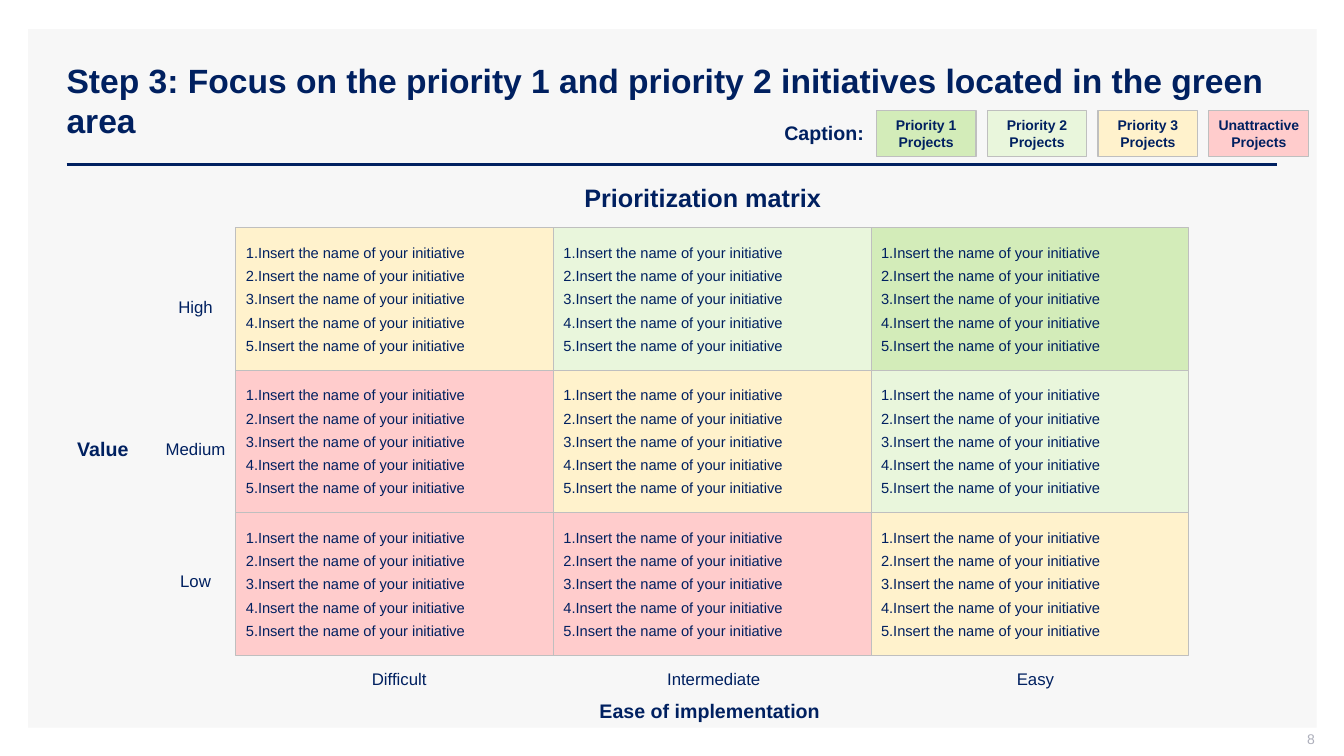
from pptx import Presentation
from pptx.dml.color import RGBColor
from pptx.enum.shapes import MSO_CONNECTOR, MSO_SHAPE
from pptx.enum.text import MSO_ANCHOR as Anchor, PP_ALIGN as Align
from pptx.oxml.ns import qn
from pptx.util import Inches, Pt
from lxml.etree import SubElement

NAVY = RGBColor(0x00, 0x20, 0x60)
PANEL = RGBColor(0xF7, 0xF7, 0xF7)
BORDER = RGBColor(0xBF, 0xBF, 0xBF)
PAGE_GREY = RGBColor(0xAD, 0xAF, 0xBB)
GREEN = RGBColor(0xD3, 0xEC, 0xB9)
LIGHT_GREEN = RGBColor(0xE9, 0xF6, 0xDC)
YELLOW = RGBColor(0xFF, 0xF2, 0xCC)
RED = RGBColor(0xFF, 0xCC, 0xCC)

MATRIX_COLOURS = [
    [YELLOW, LIGHT_GREEN, GREEN],
    [RED, YELLOW, LIGHT_GREEN],
    [RED, RED, YELLOW],
]
CAPTIONS = [
    ("Priority 1 Projects", GREEN),
    ("Priority 2 Projects", LIGHT_GREEN),
    ("Priority 3 Projects", YELLOW),
    ("Unattractive Projects", RED),
]
INITIATIVES = ["Insert the name of your initiative"] * 5


def set_all(target, values):
    for name, value in values.items():
        setattr(target, name, value)


def style_font(font, size, bold=False, colour=NAVY):
    set_all(font, {"name": "Arial", "size": Pt(size), "bold": bold})
    font.color.rgb = colour


def style_frame(frame, side=0.1, top=0.05, bottom=0.05, anchor=Anchor.MIDDLE, wrap=True):
    set_all(frame, {
        "margin_left": Inches(side), "margin_right": Inches(side),
        "margin_top": Inches(top), "margin_bottom": Inches(bottom),
        "vertical_anchor": anchor, "word_wrap": wrap,
    })


def add_label(slide, text, box, size, bold=False, align=Align.CENTER, colour=NAVY, **frame_format):
    frame = slide.shapes.add_textbox(*map(Inches, box)).text_frame
    style_frame(frame, **frame_format)
    paragraph = frame.paragraphs[0]
    paragraph.text = text
    paragraph.alignment = align
    style_font(paragraph.font, size, bold, colour)


def add_tile(slide, box, fill, border=BORDER):
    tile = slide.shapes.add_shape(MSO_SHAPE.RECTANGLE, *map(Inches, box))
    tile.shadow.inherit = False
    tile.fill.solid()
    tile.fill.fore_color.rgb = fill
    if border is None:
        tile.line.fill.background()
    else:
        tile.line.color.rgb = border
        tile.line.width = Pt(0.75)
    return tile


def add_panel(slide, box):
    panel = add_tile(slide, box, PANEL, border=None)
    # Stack the panel behind the title placeholder
    slide.shapes.title._element.addprevious(panel._element)


def number_paragraph(paragraph):
    properties = paragraph._p.get_or_add_pPr()
    properties.set("marL", str(Inches(0.12)))
    properties.set("indent", str(-Inches(0.12)))
    bullet_colour = SubElement(properties, qn("a:buClr"))
    SubElement(bullet_colour, qn("a:srgbClr")).set("val", str(NAVY))
    SubElement(properties, qn("a:buFont")).set("typeface", "+mj-lt")
    SubElement(properties, qn("a:buAutoNum")).set("type", "arabicPeriod")


def add_header(slide, box):
    left, top, width, height = box
    title = slide.shapes.title
    set_all(title, dict(zip(("left", "top", "width", "height"), map(Inches, box))))
    style_frame(title.text_frame)
    title.text_frame.text = "Step 3: Focus on the priority 1 and priority 2 initiatives located in the green area"
    heading = title.text_frame.paragraphs[0]
    heading.alignment = Align.LEFT
    style_font(heading.font, 24, True)

    # Rule under the title
    rule_y = top + height + 0.04
    rule = slide.shapes.add_connector(
        MSO_CONNECTOR.STRAIGHT, Inches(left + 0.1), Inches(rule_y),
        Inches(left + width), Inches(rule_y))
    rule.line.color.rgb = NAVY
    rule.line.width = Pt(2)
    SubElement(rule._element.spPr, qn("a:effectLst"))


def add_caption(slide, box):
    left, top, width, height = box
    add_label(slide, "Caption:", (left, top + 0.05, 1.01, 0.34), 14, True,
              Align.LEFT, anchor=Anchor.TOP)
    first, pitch = left + 1.01, 1.1
    tile_width = width - 1.01 - pitch * (len(CAPTIONS) - 1)
    for index, (text, fill) in enumerate(CAPTIONS):
        tile = add_tile(slide, (first + index * pitch, top, tile_width, height), fill)
        style_frame(tile.text_frame, side=0.04)
        entry = tile.text_frame.paragraphs[0]
        entry.text = text
        entry.alignment = Align.CENTER
        style_font(entry.font, 10, True)


def add_cell(slide, box, fill):
    frame = add_tile(slide, box, fill).text_frame
    style_frame(frame)
    for index, initiative in enumerate(INITIATIVES):
        item = frame.add_paragraph() if index else frame.paragraphs[0]
        item.text = initiative
        item.alignment = Align.LEFT
        item.space_before = Pt(2 if index else 0)
        item.space_after = Pt(2)
        number_paragraph(item)
        style_font(item.font, 10.5)


def add_matrix(slide, box):
    left, top, width, height = box
    cell_width, cell_height = width / 3, height / 3
    for row, colours in enumerate(MATRIX_COLOURS):
        for column, fill in enumerate(colours):
            add_cell(slide, (left + column * cell_width, top + row * cell_height,
                             cell_width, cell_height), fill)

    # Heading and axis names
    add_label(slide, "Prioritization matrix", (left + 2.6, top - 0.45, 4.06, 0.3), 18, True,
              side=0.08, top=0, bottom=0)
    axis = {"side": 0.2, "top": 0.1, "bottom": 0.1, "anchor": Anchor.TOP, "wrap": False}
    add_label(slide, "Value", (left - 1.78, top + 1.97, 0.92, 0.43), 14, True, **axis)
    add_label(slide, "Ease of implementation", (left + 3.4, top + 4.57, 2.6, 0.43), 14, True, **axis)

    # Axis steps, each centred on its offset from the matrix corner
    step = {"anchor": Anchor.TOP, "wrap": False}
    for text, offset in (("High", 0.63), ("Medium", 2.04), ("Low", 3.35)):
        add_label(slide, text, (left - 0.8, top + offset, 0.8, 0.3), 12, **step)
    for text, centre in (("Difficult", 1.62), ("Intermediate", 4.74), ("Easy", 7.93)):
        add_label(slide, text, (left + centre - 0.57, top + 4.33, 1.14, 0.3), 12, **step)


def main():
    deck = Presentation()
    deck.slide_width, deck.slide_height = Inches(13.33), Inches(7.5)
    slide = deck.slides.add_slide(deck.slide_layouts[5])

    add_panel(slide, (0.28, 0.29, 12.78, 6.93))
    add_header(slide, (0.56, 0.4, 12.11, 1.19))
    add_caption(slide, (7.68, 1.1, 5.3, 0.45))
    add_matrix(slide, (2.34, 2.26, 9.45, 4.24))

    # Page number
    add_label(slide, "8", (10.04, 7.25, 3, 0.21), 10, align=Align.RIGHT,
              colour=PAGE_GREY, side=0, top=0)
    deck.save("out.pptx")


if __name__ == "__main__":
    main()
